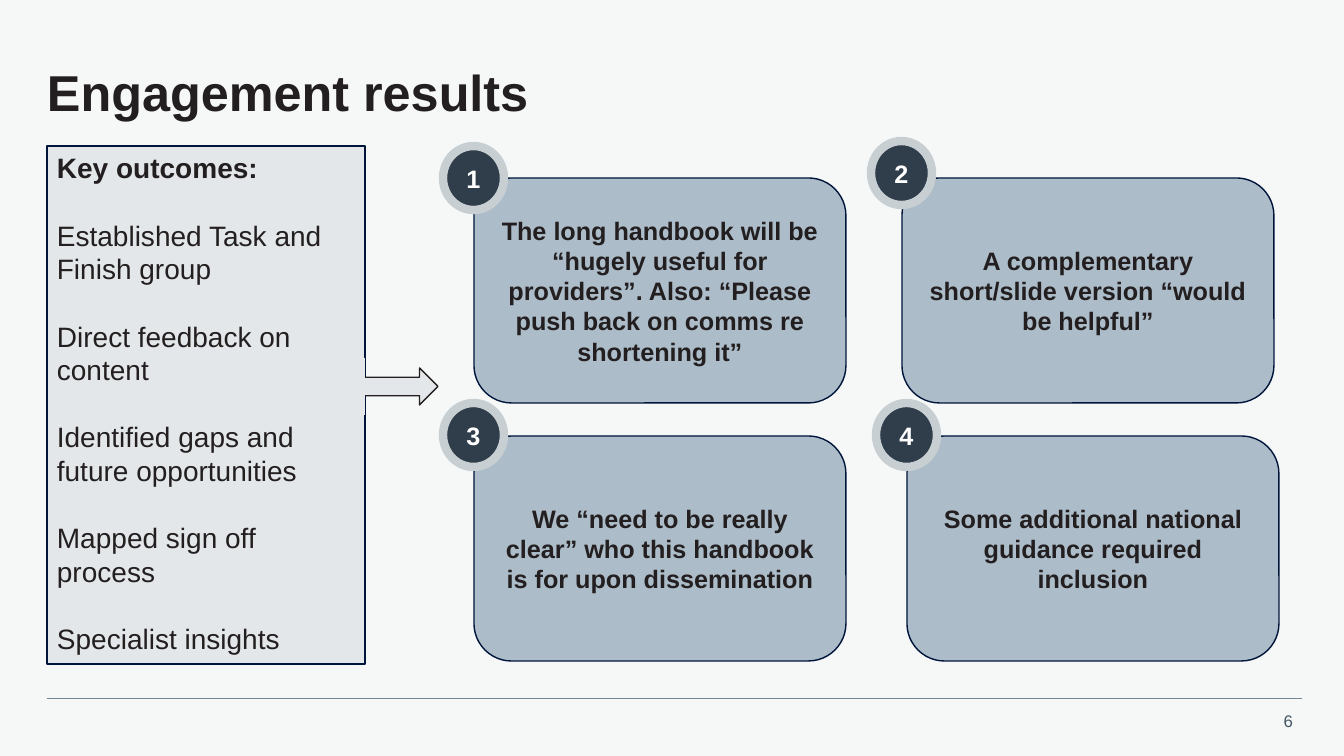
from pptx import Presentation
from pptx import util as u
from pptx.dml.color import RGBColor
from pptx.enum import shapes, text
from pptx.oxml.ns import qn
from lxml import etree

PX = 914400 / 100.8
INK, NAVY, PALE = "231F20", "00153B", "E4E7E9"
KIND, ALIGN = shapes.MSO_SHAPE, text.PP_ALIGN


def rgb(value):
    return RGBColor.from_string(value)


def add_box(kind, at, fill=None, line=None, weight=1, paras=(), frame=None, para=None, font=None):
    """Add a preset shape, or a text box when kind is None."""
    box = [u.Emu(round(v * PX)) for v in at]
    if kind is None:
        sp = s.shapes.add_textbox(*box)
    else:
        sp = s.shapes.add_shape(kind, *box)
        sp.shadow.inherit = False
        sp.fill.solid()
        sp.fill.fore_color.rgb = rgb(fill)
        if line:
            sp.line.color.rgb = rgb(line)
            sp.line.width = u.Pt(weight)
        else:
            sp.line.fill.background()
    tf = sp.text_frame
    for name, value in {"word_wrap": True, **(frame or {})}.items():
        setattr(tf, name, value)
    for i, words in enumerate(paras):
        p = tf.add_paragraph() if i else tf.paragraphs[0]
        for name, value in (para or {}).items():
            if i or name != "space_before":
                setattr(p, name, value)
        r = p.add_run()
        r.text = words
        style = {"name": "Arial", "color": INK, "bold": False, **font}
        r.font.color.rgb = rgb(style.pop("color"))
        for name, value in style.items():
            setattr(r.font, name, value)
    return sp


prs = Presentation()
prs.slide_width, prs.slide_height = round(1344 * PX), round(756 * PX)
s = prs.slides.add_slide(prs.slide_layouts[6])
s.background.fill.solid()
s.background.fill.fore_color.rgb = rgb("F6F8F8")

# Title
MIDDLE = {"vertical_anchor": text.MSO_ANCHOR.MIDDLE}
no_margins = {f"margin_{side}": 0 for side in ("left", "top", "right", "bottom")}
add_box(None, (47, 47, 1257, 96), paras=["Engagement results"], frame={**MIDDLE, **no_margins},
        para={"line_spacing": 0.9}, font={"size": u.Pt(36), "bold": True})

# Footer rule and page number
rule = s.shapes.add_connector(shapes.MSO_CONNECTOR.STRAIGHT,
                              *[round(v * PX) for v in (47, 698, 1302, 698)])
rule.line.color.rgb = rgb("768692")
rule.line.width = u.Pt(0.5)
etree.SubElement(rule._element.spPr, qn("a:effectLst"))
add_box(None, (1262, 706, 41, 30), paras=["6"], frame={"word_wrap": False},
        para={"alignment": ALIGN.RIGHT}, font={"size": u.Pt(12), "color": "425563"})

# Numbered feedback cards
cards = [
    (474, 178, 146, "The long handbook will be “hugely useful for providers”. "
                    "Also: “Please push back on comms re shortening it”"),
    (902, 178, 141, "A complementary short/slide version “would be helpful”"),
    (474, 436, 403, "We “need to be really clear” who this handbook is for upon dissemination"),
    (907, 436, 403, "Some additional national guidance required inclusion"),
]
centred = {"alignment": ALIGN.CENTER, "line_spacing": u.Pt(21.6)}
card_font = {"size": u.Pt(18), "bold": True}
for number, (x, y, badge_y, words) in enumerate(cards, 1):
    add_box(KIND.ROUNDED_RECTANGLE, (x, y, 372, 225), "ACBCC8", NAVY, paras=[words],
            frame=MIDDLE, para=centred, font=card_font)
    add_box(KIND.OVAL, (x - 31, badge_y, 61, 64), "303D4B", "C8CFD3", 6, [str(number)],
            MIDDLE, centred, {**card_font, "color": "FFFFFF"})

# Key outcomes panel
outcomes = ["Key outcomes:", "Established Task and Finish group", "Direct feedback on content",
            "Identified gaps and future opportunities", "Mapped sign off process",
            "Specialist insights"]
panel = add_box(KIND.RECTANGLE, (47, 146, 318, 518), PALE, NAVY, paras=outcomes,
                frame={"vertical_anchor": text.MSO_ANCHOR.TOP},
                para={"alignment": ALIGN.LEFT, "line_spacing": u.Pt(24), "space_before": u.Pt(24)},
                font={"size": u.Pt(20)})
panel.text_frame.paragraphs[0].runs[0].font.bold = True

# Arrow growing out of the panel, its tail hidden by a plain patch
add_box(KIND.RIGHT_ARROW, (292, 368, 146, 37), PALE, INK)
add_box(KIND.RECTANGLE, (291, 358, 74, 57), PALE)

prs.save("out.pptx")
